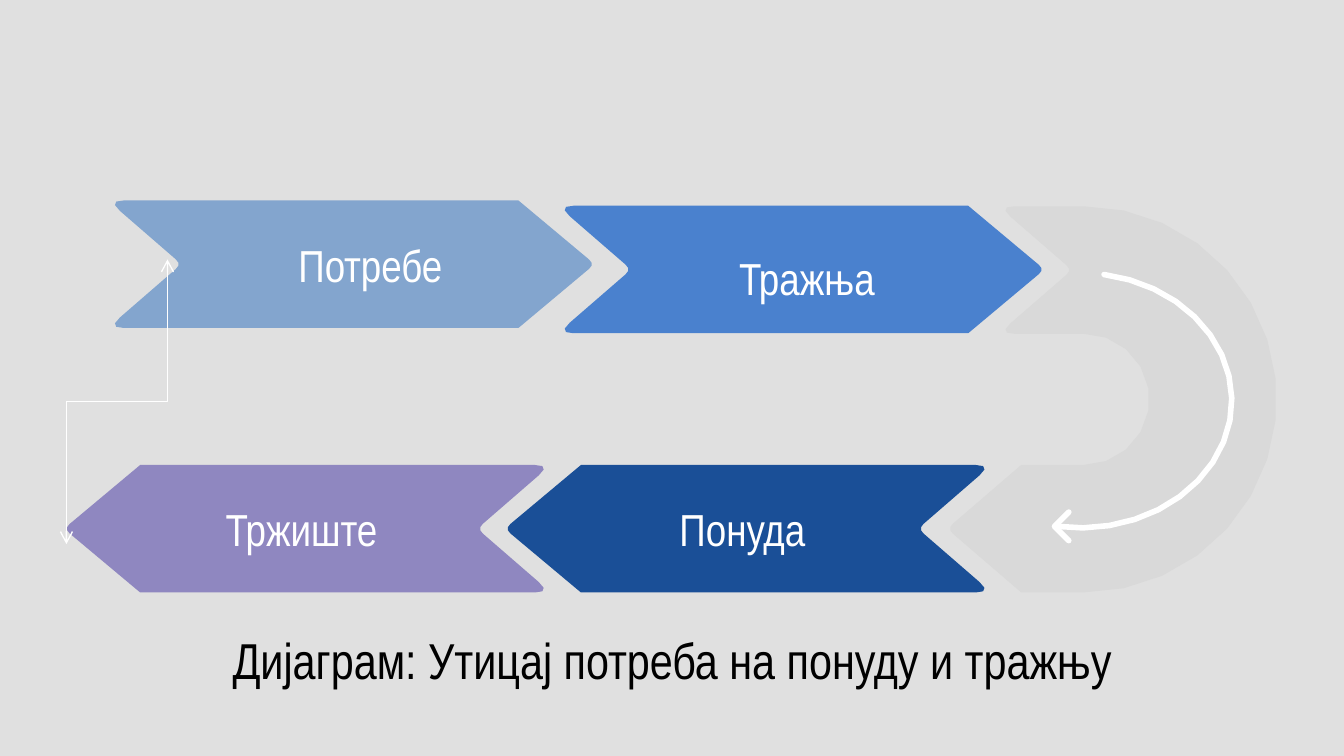
from dataclasses import dataclass
from math import cos, dist, radians, sin

from lxml.etree import SubElement
from pptx import Presentation
from pptx.dml.color import RGBColor as Rgb
from pptx.enum.shapes import MSO_CONNECTOR as Connector
from pptx.enum.text import MSO_ANCHOR as Anchor, PP_ALIGN as Align
from pptx.oxml.ns import qn
from pptx.util import Cm, Pt


@dataclass(frozen=True)
class Theme:
    font: str = "Arial Narrow"
    title_size: int = 27
    label_size: int = 24
    background: str = "E0E0E0"
    title: str = "000000"
    white: str = "FFFFFF"
    turn: str = "D9D9D9"
    needs: str = "83A5CE"
    demand: str = "4A81CE"
    supply: str = "1A4F97"
    market: str = "8F87C0"


theme = Theme()


def add_rounded_outline(corners, color, steps=3):
    """Draw a filled polygon from corners (x, y, cut) in cm; a cut of 0 stays sharp."""
    points = []
    for i, (x, y, cut) in enumerate(corners):
        if not cut:
            points.append((Cm(x), Cm(y)))
            continue
        ends = []
        for other in (corners[i - 1], corners[(i + 1) % len(corners)]):
            share = cut / dist((x, y), other[:2])
            ends.append((x + share * (other[0] - x), y + share * (other[1] - y)))
        for step in range(steps + 1):
            t = step / steps
            points.append([Cm((1 - t) ** 2 * a + 2 * t * (1 - t) * c + t ** 2 * b)
                           for a, c, b in zip(ends[0], (x, y), ends[1])])
    builder = page.shapes.build_freeform(*points[0], scale=1.0)
    builder.add_line_segments(points[1:], close=True)
    outline = builder.convert_to_shape()
    outline.shadow.inherit = False
    outline.fill.solid()
    outline.fill.fore_color.rgb = Rgb.from_string(color)
    outline.line.fill.background()


def write_centered(box, text, size, color, side, top):
    frame = box.text_frame
    frame.text = text
    frame.word_wrap = True
    frame.vertical_anchor = Anchor.MIDDLE
    frame.margin_left = frame.margin_right = Cm(side)
    frame.margin_top = frame.margin_bottom = Cm(top)
    para = frame.paragraphs[0]
    para.alignment = Align.CENTER
    span = para.runs[0]
    span.font.name = theme.font
    span.font.size = Pt(size)
    span.font.color.rgb = Rgb.from_string(color)


deck = Presentation()
deck.slide_width, deck.slide_height = Cm(25.4), Cm(14.29)
page = deck.slides.add_slide(deck.slide_layouts[5])
page.background.fill.solid()
page.background.fill.fore_color.rgb = Rgb.from_string(theme.background)

title = page.shapes.title
title.left, title.top, title.width, title.height = Cm(1.27), Cm(12.01), Cm(22.86), Cm(0.9)
write_centered(title, "Дијаграм: Утицај потреба на понуду и тражњу",
               theme.title_size, theme.title, 0.25, 0.25)

# Gray U-turn from the upper row to the lower row
tail_cut, tip_cut = 0.3, 0.14
center_x, center_y, outer, inner = 20.48, 7.55, 3.65, 1.24
middle = (outer + inner) / 2
inner_arc = [(center_x + inner * cos(radians(a)), center_y + inner * sin(radians(a)), 0)
             for a in range(-90, 91, 20)]
outer_arc = [(center_x + outer * cos(radians(a)), center_y + outer * sin(radians(a)), 0)
             for a in range(90, -91, -12)]
add_rounded_outline(
    [(18.87, center_y - outer, tail_cut),
     (20.26, center_y - middle, tip_cut),
     (18.87, center_y - inner, tail_cut)]
    + inner_arc
    + [(19.3, center_y + inner, 0),
       (17.9, center_y + middle, tip_cut),
       (19.3, center_y + outer, 0)]
    + outer_arc, theme.turn)

# Chevrons: text, color, left, top, direction, label left, label top
band_width, band_height, label_width = 9.04, 2.41, 6.38
chevrons = [
    ("Понуда", theme.supply, 9.6, 8.79, -1, 10.84, 8.79),
    ("Потребе", theme.needs, 2.14, 3.79, 1, 3.81, 3.79),
    ("Тражња", theme.demand, 10.64, 3.89, 1, 12.06, 4.04),
    ("Тржиште", theme.market, 1.27, 8.79, -1, 2.51, 8.79),
]
profile = [(-0.1, 0, tail_cut), (7.66, 0, 0), (9.1, 0.5, tip_cut),
           (7.66, 1, 0), (-0.1, 1, tail_cut), (1.29, 0.5, tip_cut)]
for text, color, left, top, direction, label_left, label_top in chevrons:
    tail = left if direction == 1 else left + band_width
    add_rounded_outline([(tail + direction * x, top + y * band_height, cut)
                         for x, y, cut in profile], color)

# White curved arrow inside the U-turn
arc = [(Cm(20.42 + 2.86 * cos(radians(a))), Cm(7.57 + 2.41 * sin(radians(a))))
       for a in range(-81, 100, 10)]
builder = page.shapes.build_freeform(*arc[0], scale=1.0)
builder.add_line_segments(arc[1:], close=False)
builder.move_to(Cm(20.2), Cm(9.68))
builder.add_line_segments([(Cm(19.93), Cm(9.95)), (Cm(20.2), Cm(10.22))], close=False)
curve = builder.convert_to_shape()
curve.shadow.inherit = False
curve.fill.background()
curve.line.color.rgb = Rgb.from_string(theme.white)
curve.line.width = Pt(3)
curve.line._get_or_add_ln().set("cap", "rnd")

for text, color, left, top, direction, label_left, label_top in chevrons:
    box = page.shapes.add_textbox(Cm(label_left), Cm(label_top), Cm(label_width), Cm(band_height))
    write_centered(box, text, theme.label_size, theme.white, 0.1, 0.05)

# Two-way elbow between market and needs, turned so it leaves vertically
elbow = page.shapes.add_connector(Connector.ELBOW, Cm(-0.48), Cm(6.64), Cm(4.9), Cm(8.55))
elbow.line.color.rgb = Rgb.from_string(theme.white)
elbow.line.width = Pt(0.75)
properties = elbow._element.spPr
properties.find(qn("a:xfrm")).set("rot", "5400000")
for end in ("a:headEnd", "a:tailEnd"):
    SubElement(elbow.line._get_or_add_ln(), qn(end), type="arrow")
SubElement(properties, qn("a:effectLst"))

deck.save("out.pptx")
